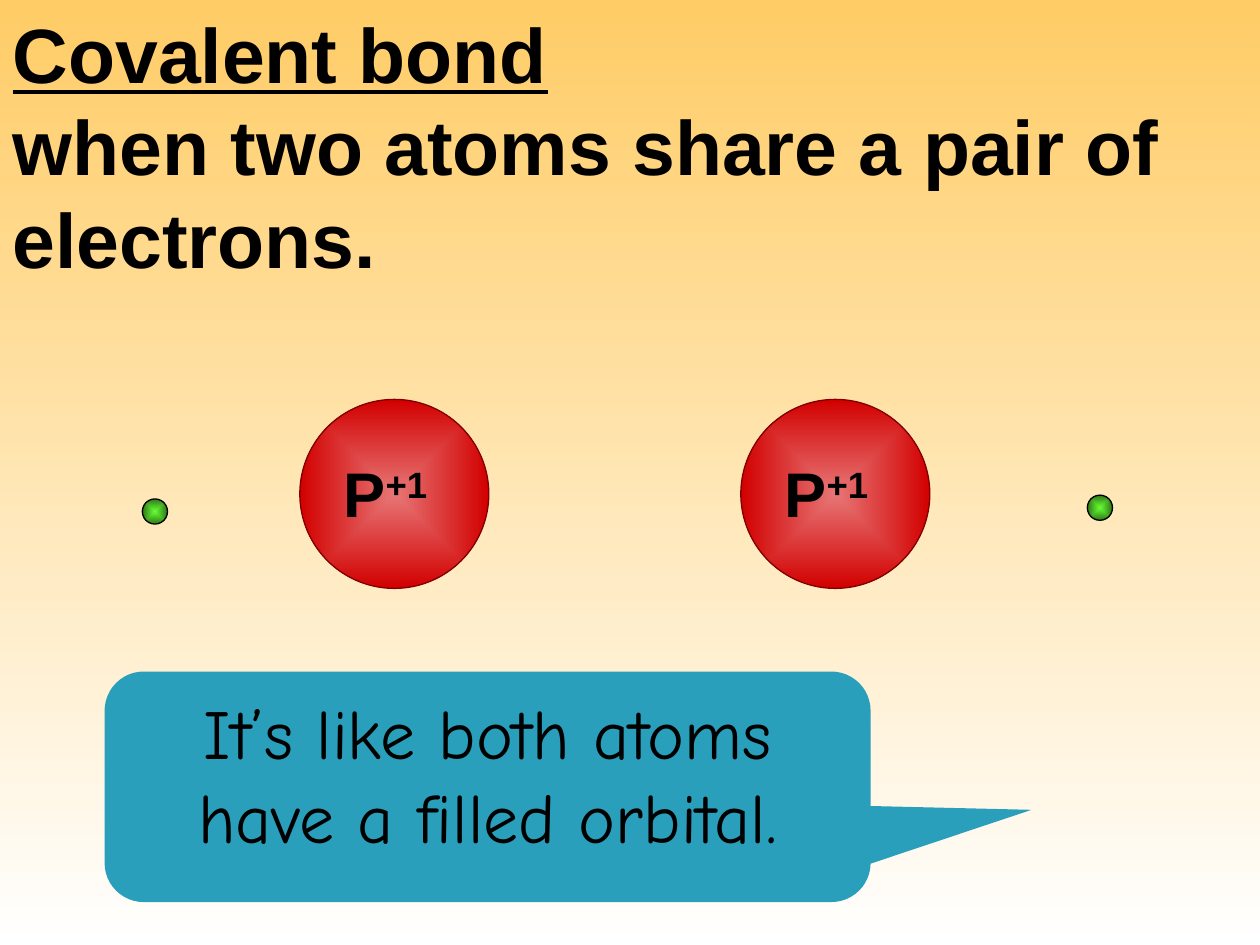
import dataclasses

import lxml.etree
import pptx
import pptx.dml.color
import pptx.enum.shapes
import pptx.enum.text
import pptx.oxml.ns
import pptx.util

Inches = pptx.util.Inches
Shape = pptx.enum.shapes.MSO_SHAPE
Align = pptx.enum.text.PP_ALIGN
Anchor = pptx.enum.text.MSO_ANCHOR


@dataclasses.dataclass(frozen=True)
class Theme:
    """Colours, fonts and type sizes."""
    sky: tuple = ("FFCC66", "FFFFFF")
    core: tuple = ("E77676", "D20000")
    rim: str = "800000"
    spark: tuple = ("66FF33", "2F7618")
    ink: str = "000000"
    note: str = "2A9FBC"
    face: str = "Arial"
    hand: str = "Comic Neue"
    head: float = 44
    label: float = 36
    talk: float = 40


THEME = Theme()


def color(code):
    """Turn a hex code into a colour."""
    return pptx.dml.color.RGBColor.from_string(code)


def style(run, face, size, bold=False):
    """Format one run in the ink colour."""
    font = run.font
    font.name, font.size, font.bold = face, pptx.util.Pt(size), bold
    font.color.rgb = color(THEME.ink)


def blend(fill, codes):
    """Give a fill a gradient between two colours."""
    fill.gradient()
    for stop, code in zip(fill.gradient_stops, codes):
        stop.color.rgb = color(code)


def sphere(slide, box, codes, edge):
    """Draw a ball shaded from its centre."""
    ball = slide.shapes.add_shape(Shape.OVAL, *map(Inches, box))
    ball.shadow.inherit = False
    blend(ball.fill, codes)
    qn = pptx.oxml.ns.qn
    grad = ball._element.spPr.find(qn("a:gradFill"))
    grad.remove(grad.find(qn("a:lin")))
    shade = lxml.etree.SubElement(grad, qn("a:path"), {"path": "shape"})
    sides = dict.fromkeys("ltrb", "50000")
    lxml.etree.SubElement(shade, qn("a:fillToRect"), sides)
    ball.line.color.rgb = color(edge)
    ball.line.width = pptx.util.Pt(0.75)
    return ball


def proton(slide, box):
    """Draw a labelled proton."""
    frame = sphere(slide, box, THEME.core, THEME.rim).text_frame
    frame.word_wrap = False
    frame.vertical_anchor = Anchor.MIDDLE
    frame.margin_right, frame.margin_bottom = Inches(0.16), Inches(0.08)
    para = frame.paragraphs[0]
    para.alignment = Align.CENTER
    for text in ("P", "+1 "):
        run = para.add_run()
        run.text = text
        style(run, THEME.face, THEME.label, True)
    run.font._element.set("baseline", "30000")


def heading(slide, box):
    """Place the term and its meaning in the title."""
    title = slide.shapes.title
    title.left, title.top, title.width, title.height = map(Inches, box)
    frame = title.text_frame
    frame.text = "Covalent bond\nwhen two atoms share a pair of electrons."
    frame.word_wrap = True
    frame.auto_size = pptx.enum.text.MSO_AUTO_SIZE.NONE
    frame.vertical_anchor = Anchor.TOP
    for para in frame.paragraphs:
        para.alignment = Align.LEFT
        style(para.runs[0], THEME.face, THEME.head, True)
    frame.paragraphs[0].runs[0].font.underline = True


def atoms(slide, box):
    """Place two protons with an electron on each outer side."""
    left, top, width, size = box
    dot = 0.2
    for side in (1.25, 4.75):
        proton(slide, (left + side, top, size, size))
    for side, drop in ((width - dot, 0.76), (0, 0.79)):
        spot = (left + side, top + drop, dot, dot)
        sphere(slide, spot, THEME.spark, THEME.ink)


def callout(slide, box):
    """Place the spoken remark."""
    kind = Shape.ROUNDED_RECTANGULAR_CALLOUT
    note = slide.shapes.add_shape(kind, *map(Inches, box))
    note.shadow.inherit = False
    for slot, value in enumerate((0.71, 0.1, 0.17)):
        note.adjustments[slot] = value
    note.fill.solid()
    note.fill.fore_color.rgb = color(THEME.note)
    note.line.fill.background()
    frame = note.text_frame
    frame.word_wrap = True
    frame.vertical_anchor = Anchor.TOP
    para = frame.paragraphs[0]
    para.text = "It’s like both atoms have a filled orbital."
    para.alignment = Align.CENTER
    style(para.runs[0], THEME.hand, THEME.talk)


def main():
    """Build and save the slide."""
    deck = pptx.Presentation()
    deck.slide_width, deck.slide_height = Inches(10), Inches(7.5)
    slide = deck.slides.add_slide(deck.slide_layouts[5])
    back = slide.background.fill
    blend(back, THEME.sky)
    back.gradient_angle = 270
    heading(slide, (0, 0, 10, 2.3))
    atoms(slide, (1.13, 3.17, 7.7, 1.5))
    callout(slide, (0.83, 5.33, 6.08, 1.83))
    deck.save("out.pptx")


if __name__ == "__main__":
    main()
